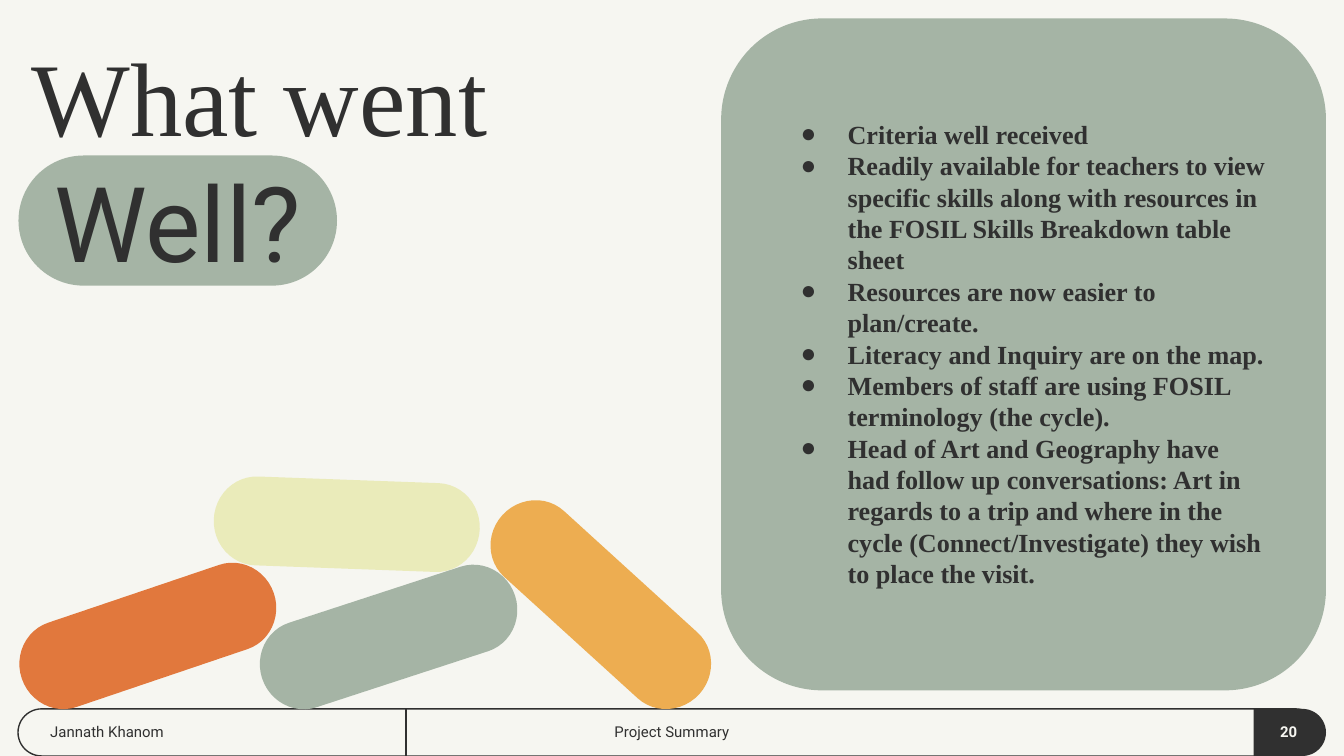
from lxml import etree
from pptx import Presentation
from pptx.dml.color import RGBColor
from pptx.enum import shapes, text
from pptx.oxml.ns import qn
from pptx.util import Cm, Pt

INK, SAGE, PAPER = "303030", "A5B4A5", "F6F6F1"
SERIF, SANS = "Times New Roman", "Roboto"
KIND, ALIGN = shapes.MSO_SHAPE, text.PP_ALIGN

deck = Presentation()
deck.slide_width, deck.slide_height = Cm(25.4), Cm(14.29)
slide = deck.slides.add_slide(deck.slide_layouts[6])


def paint(color, hue):
    color.rgb = RGBColor.from_string(hue)


def write(words, at=None, shape=None, size=8, font=SANS, hue=INK, bold=False,
          align=ALIGN.LEFT, mid=False, dots=False):
    """Fill a shape, or a new text box, with one paragraph per string."""
    shape = shape or slide.shapes.add_textbox(*map(Cm, at))
    frame = shape.text_frame
    frame.word_wrap = True
    frame.margin_left = frame.margin_right = Cm(0.25)
    frame.margin_top = frame.margin_bottom = Cm(0.25)
    frame.vertical_anchor = text.MSO_ANCHOR.MIDDLE if mid else text.MSO_ANCHOR.TOP
    for i, line in enumerate(words):
        para = frame.paragraphs[0] if i == 0 else frame.add_paragraph()
        para.alignment = align
        if dots:
            props = para._p.get_or_add_pPr()
            props.set("marL", str(Cm(1.27)))
            props.set("indent", str(-Cm(0.89)))
            tint = etree.SubElement(props, qn("a:buClr"))
            etree.SubElement(tint, qn("a:srgbClr"), val=INK)
            etree.SubElement(props, qn("a:buFont"), typeface=font)
            etree.SubElement(props, qn("a:buChar"), char="●")
        run = para.add_run()
        run.text = line
        run.font.size, run.font.name, run.font.bold = Pt(size), font, bold
        paint(run.font.color, hue)


def draw(kind, at, fill=None, turn=0, bends=()):
    """Add a preset shape, outlined when it has no fill."""
    shape = slide.shapes.add_shape(kind, *map(Cm, at))
    shape.shadow.inherit = False
    shape.rotation = turn
    for i, bend in enumerate(bends):
        shape.adjustments[i] = bend
    if fill:
        shape.fill.solid()
        paint(shape.fill.fore_color, fill)
        shape.line.fill.background()
    else:
        shape.fill.background()
        paint(shape.line.color, INK)
        shape.line.width = Pt(0.75)
    return shape


# Background
back = slide.background.fill
back.solid()
paint(back.fore_color, PAPER)

# Footer bar, divider and number tab, with the text panel
draw(KIND.ROUND_2_SAME_RECTANGLE, (12.19, 1.55, 0.89, 24.59), turn=90, bends=(0.5, 0.5))
draw(KIND.ROUNDED_RECTANGLE, (13.63, 0.35, 11.43, 12.7), SAGE, bends=(0.167,))
rule = slide.shapes.add_connector(shapes.MSO_CONNECTOR.STRAIGHT,
                                  Cm(7.67), Cm(13.4), Cm(7.67), Cm(14.29))
paint(rule.line.color, INK)
rule.line.width = Pt(0.75)
etree.SubElement(rule._element.spPr, qn("a:effectLst"))
draw(KIND.ROUND_2_SAME_RECTANGLE, (23.93, 13.16, 0.89, 1.37), INK, turn=90, bends=(0.5, 0))

# Bullet list
write(["Criteria well received",
       "Readily available for teachers to view specific skills along with "
       "resources in the FOSIL Skills Breakdown table sheet",
       "Resources are now easier to plan/create.",
       "Literacy and Inquiry are on the map.",
       "Members of staff are using FOSIL terminology (the cycle).",
       "Head of Art and Geography have had follow up conversations: Art in "
       "regards to a trip and where in the cycle (Connect/Investigate) they "
       "wish to place the visit."],
      at=(14.5, 1.02, 9.7, 11.33), size=14, font=SERIF, bold=True,
      mid=True, dots=True)

# Title
write(["What went"], at=(0.35, 0.36, 12.73, 8.51), size=56, font=SERIF)

# Stacked pills
for left, top, turn, hue in [(0.28, 11.18, 341.3, "E1783D"),
                             (4.04, 9.07, 2.1, "EAEBBA"),
                             (4.83, 11.2, 341.9, SAGE),
                             (8.84, 10.59, 42.3, "EDAD51")]:
    draw(KIND.FLOWCHART_TERMINATOR, (left, top, 5.03, 1.68), hue, turn)

# Footer text
write(["Jannath Khanom"], at=(0.7, 13.48, 6.12, 0.86))
write(["Project Summary"], at=(9.84, 13.48, 5.72, 0.86), align=ALIGN.CENTER)
write(["20"], at=(23.67, 13.48, 1.37, 0.89), hue=PAPER, bold=True, align=ALIGN.CENTER)

# Title badge
badge = draw(KIND.ROUNDED_RECTANGLE, (0.35, 2.94, 6.02, 2.46), SAGE, bends=(0.5,))
write(["Well?"], shape=badge, size=56, align=ALIGN.CENTER, mid=True)

deck.save("out.pptx")
